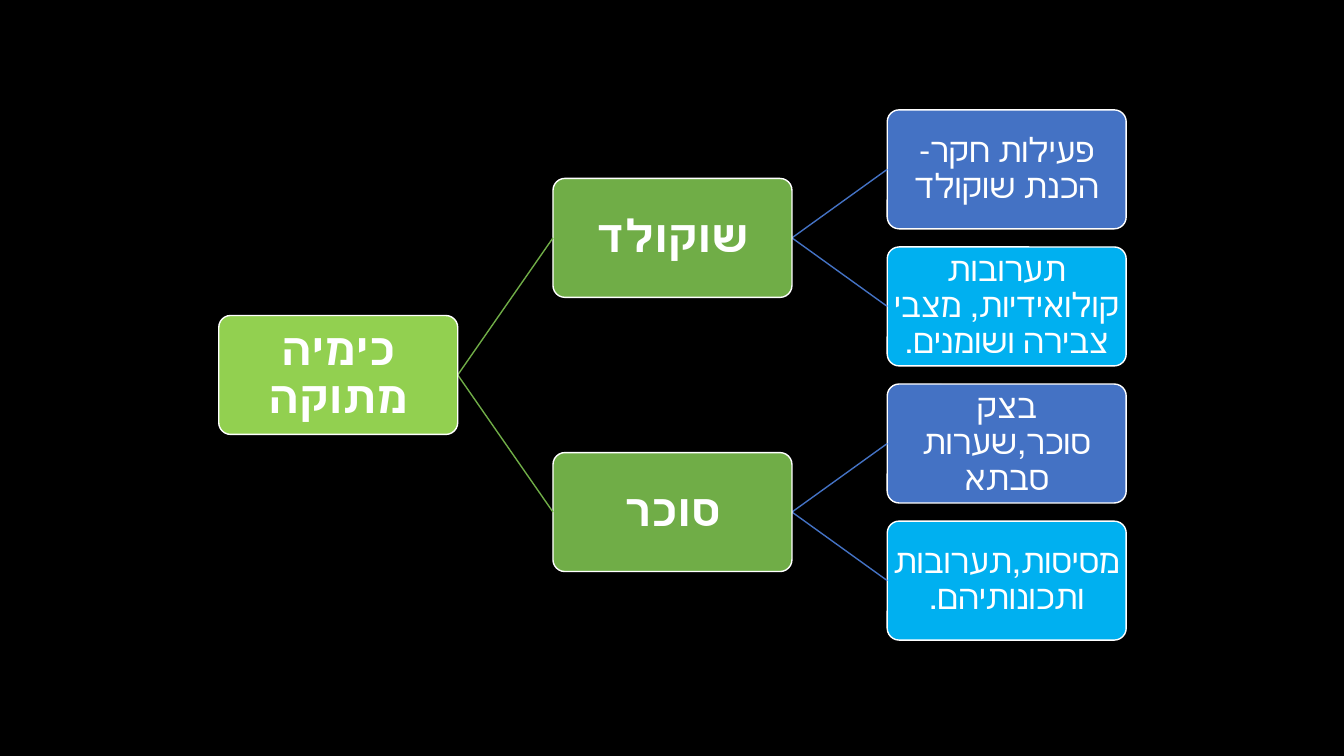
from lxml import etree
from pptx import Presentation
from pptx.dml.color import RGBColor
from pptx.enum import lang, shapes, text
from pptx.oxml import ns
from pptx.util import Inches, Pt

COLORS = {
    "background": "000000",
    "white": "FFFFFF",
    "root": "92D050",
    "topic": "70AD47",
    "activity": "4472C4",
    "concept": "00B0F0",
}
FONT = "Calibri"
BOX_W, BOX_H = 2.37, 1.18
COLUMN_STEP, ROW_STEP = 3.315, 1.36

TREE = ("כימיה מתוקה", "root", [
    ("שוקולד", "topic", [
        ("פעילות חקר- הכנת שוקולד", "activity", []),
        ("תערובות קולואידיות, מצבי צבירה ושומנים.", "concept", []),
    ]),
    ("סוכר", "topic", [
        ("בצק סוכר,שערות סבתא", "activity", []),
        ("מסיסות,תערובות ותכונותיהם.", "concept", []),
    ]),
])


def rgb(name):
    """Return the named colour."""
    return RGBColor.from_string(COLORS[name])


def add_node(s, left, top, label, color, size, bold):
    """Draw one rounded box with centred right-to-left text."""
    sp = s.shapes.add_shape(shapes.MSO_SHAPE.ROUNDED_RECTANGLE, Inches(left),
                            Inches(top), Inches(BOX_W), Inches(BOX_H))
    sp.adjustments[0] = 0.1
    sp.shadow.inherit = False
    sp.fill.solid()
    sp.fill.fore_color.rgb = rgb(color)
    sp.line.color.rgb = rgb("white")
    sp.line.width = Pt(1)

    tf = sp.text_frame
    tf.word_wrap = True
    tf.vertical_anchor = text.MSO_ANCHOR.MIDDLE
    tf.margin_left = tf.margin_right = 0
    tf.margin_top = tf.margin_bottom = Inches(0.02)
    p = tf.paragraphs[0]
    p.alignment = text.PP_ALIGN.CENTER
    p.line_spacing = 0.9
    p._p.get_or_add_pPr().set("rtl", "1")
    r = p.add_run()
    r.text = label
    r.font.size = Pt(size)
    r.font.bold = bold
    r.font.name = FONT
    r.font.color.rgb = rgb("white")
    r.font.language_id = lang.MSO_LANGUAGE_ID.HEBREW
    etree.SubElement(r._r.get_or_add_rPr(), ns.qn("a:cs"), typeface="+mn-cs")


def add_branch(s, x, y, child_y, color):
    """Draw a line from a parent's right edge to its child's left edge."""
    line = s.shapes.add_connector(
        shapes.MSO_CONNECTOR.STRAIGHT, Inches(x), Inches(y),
        Inches(x + COLUMN_STEP - BOX_W), Inches(child_y))
    line.line.color.rgb = rgb(color)
    line.line.width = Pt(1)
    etree.SubElement(line._element.spPr, ns.qn("a:effectLst"))


def add_tree(s, left, top, node):
    """Draw a subtree from its top left corner; return its root's centre and next top."""
    label, color, children = node
    centers, next_top = [], top
    for child in children:
        center, next_top = add_tree(s, left + COLUMN_STEP, next_top, child)
        centers.append(center)
    if children:
        y = sum(centers) / len(centers)
    else:
        y, next_top = top + BOX_H / 2, top + ROW_STEP
    for child, center in zip(children, centers):
        branch_color = "topic" if child[1] == "topic" else "activity"
        add_branch(s, left + BOX_W, y, center, branch_color)
    add_node(s, left, y - BOX_H / 2, label, color,
             32 if children else 24, bool(children))
    return y, next_top


def main():
    """Build and save the slide."""
    prs = Presentation()
    prs.slide_width, prs.slide_height = Inches(13.33), Inches(7.5)
    s = prs.slides.add_slide(prs.slide_layouts[6])
    s.background.fill.solid()
    s.background.fill.fore_color.rgb = rgb("background")
    add_tree(s, 2.17, 1.09, TREE)
    prs.save("out.pptx")


if __name__ == "__main__":
    main()
